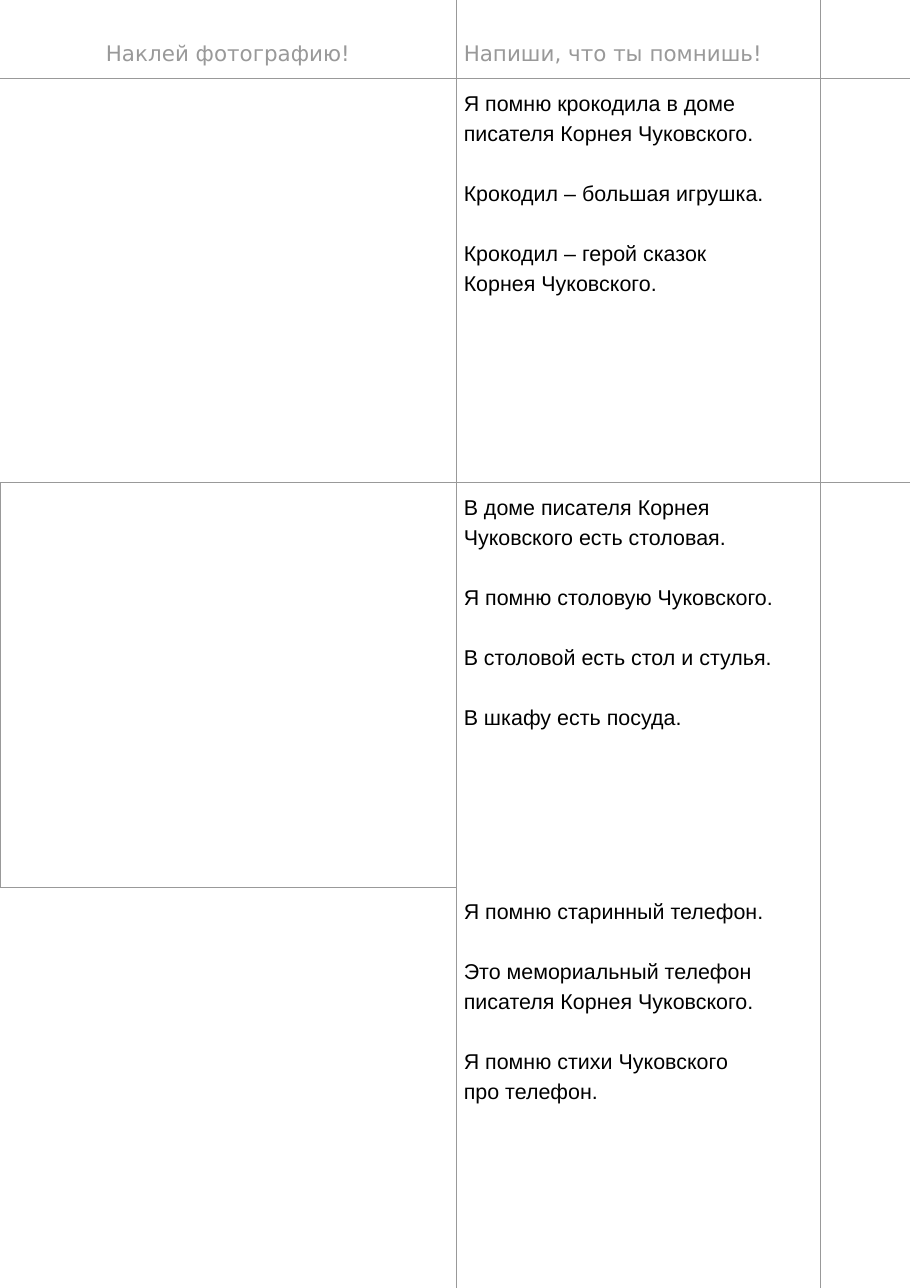
from lxml import etree
from pptx import Presentation
from pptx.dml.color import RGBColor
from pptx.enum.text import PP_ALIGN
from pptx.oxml.ns import qn
from pptx.util import Inches, Pt

LEFT, CENTER = PP_ALIGN.LEFT, PP_ALIGN.CENTER
GRAY, BLACK, WHITE = "999999", "000000", "FFFFFF"
LEAD = Pt(19.6)


def color(code):
    return RGBColor.from_string(code)


def edge(cell, side, shown):
    props = cell._tc.get_or_add_tcPr()
    line = etree.SubElement(props, qn("a:ln" + side), w=str(Pt(0.53) if shown else 0))
    if shown:
        fill = etree.SubElement(line, qn("a:solidFill"))
        etree.SubElement(fill, qn("a:srgbClr"), val=GRAY)
    else:
        etree.SubElement(line, qn("a:noFill"))


deck = Presentation()
deck.slide_width, deck.slide_height = Inches(8.26), Inches(11.69)
slide = deck.slides.add_slide(deck.slide_layouts[6])

widths = [4.14, 3.31, 0.82]
heights = [0.72, 3.67, 3.67, 3.67]
frame = slide.shapes.add_table(
    4, 3, Inches(0), Inches(-0.01), Inches(sum(widths)), Inches(sum(heights)))
table = frame.table
table.first_row = False
table.horz_banding = False
for column, width in zip(table.columns, widths):
    column.width = Inches(width)
for row, height in zip(table.rows, heights):
    row.height = Inches(height)

texts = {
    (0, 0): [["Наклей фотографию!"]],
    (0, 1): [["Напиши, что ты помнишь!"]],
    (1, 1): [
        ["Я помню крокодила в доме писателя Корнея Чуковского."],
        ["Крокодил – большая игрушка."],
        ["Крокодил – герой сказок", "Корнея Чуковского."],
    ],
    (2, 1): [
        ["В доме писателя Корнея Чуковского есть столовая."],
        ["Я помню столовую Чуковского."],
        ["В столовой есть стол и стулья."],
        ["В шкафу есть посуда."],
    ],
    (3, 1): [
        ["Я помню старинный телефон."],
        ["Это мемориальный телефон", "писателя Корнея Чуковского."],
        ["Я помню стихи Чуковского", "про телефон."],
    ],
}

bare = {
    (0, 0): "LT", (0, 1): "T", (0, 2): "T",
    (1, 0): "L",
    (2, 1): "B", (2, 2): "B",
    (3, 0): "LB", (3, 1): "TB", (3, 2): "TB",
}

for r in range(4):
    for c in range(3):
        cell = table.cell(r, c)
        for side in "LRTB":
            edge(cell, side, side not in bare.get((r, c), ""))
        cell.fill.solid()
        cell.fill.fore_color.rgb = color(WHITE)
        cell.margin_left = cell.margin_right = Inches(0.07)
        cell.margin_top = Inches(0.34 if r == 0 else 0.07)
        cell.margin_bottom = Inches(0.07)

for (r, c), groups in texts.items():
    body = table.cell(r, c).text_frame
    para = body.paragraphs[0]
    for g, group in enumerate(groups):
        for n, line in enumerate(group):
            if g or n:
                para = body.add_paragraph()
            para.alignment = CENTER if c == 0 else LEFT
            para.line_spacing = LEAD
            if g and n == 0:
                para.space_before = LEAD
            run = para.add_run()
            run.text = line
            run.font.size = Pt(14)
            run.font.name = "DejaVu Sans" if r == 0 else "Arial"
            run.font.color.rgb = color(GRAY if r == 0 else BLACK)

deck.save("out.pptx")
